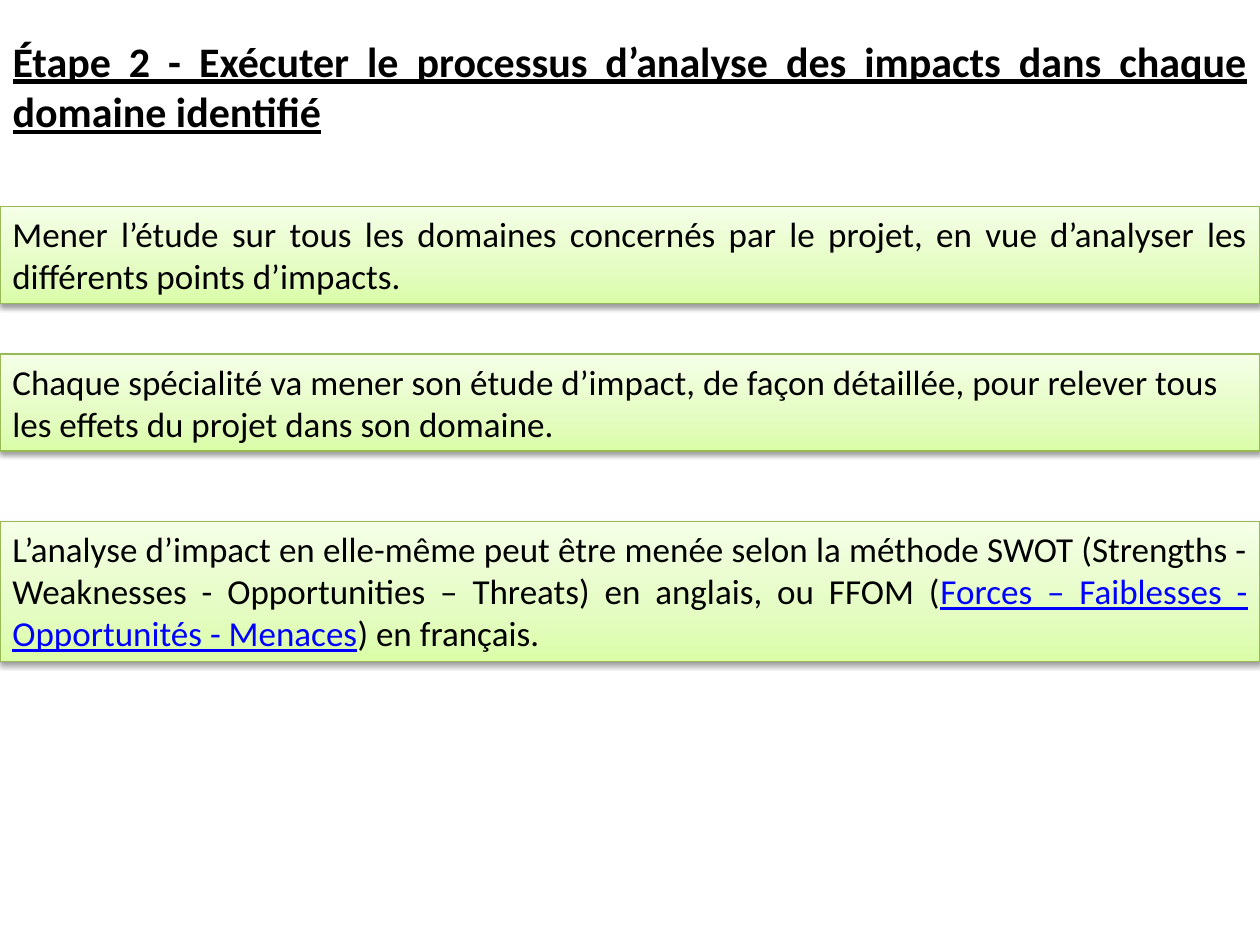
"""Build the slide on step 2 of the impact analysis: a title and three green boxes."""
import copy

import lxml.etree
import pptx
import pptx.dml.color
import pptx.enum.shapes
import pptx.enum.text
import pptx.oxml.ns
import pptx.util

Inches = pptx.util.Inches
Pt = pptx.util.Pt
RGBColor = pptx.dml.color.RGBColor
qn = pptx.oxml.ns.qn
Align = pptx.enum.text.PP_ALIGN
Anchor = pptx.enum.text.MSO_ANCHOR

BLACK = RGBColor(0x00, 0x00, 0x00)
LINK_BLUE = RGBColor(0x00, 0x00, 0xFF)
LINE_GREEN = RGBColor(0x98, 0xB9, 0x55)
GRADIENT = [
    (0, RGBColor(0xDA, 0xFD, 0xA7)),
    (0.35, RGBColor(0xE4, 0xFC, 0xC2)),
    (1, RGBColor(0xF5, 0xFF, 0xE7)),
]
BOXES = [
    (1.64, 0.77, Align.JUSTIFY, [
        ("Mener l’étude sur tous les domaines concernés par le projet, "
         "en vue d’analyser les différents points d’impacts.", False),
    ]),
    (2.81, 0.77, Align.LEFT, [
        ("Chaque spécialité va mener son étude d’impact, de façon détaillée, "
         "pour relever tous les effets du projet dans son domaine.", False),
    ]),
    (4.14, 1.11, Align.JUSTIFY, [
        ("L’analyse d’impact en elle-même peut être menée selon la méthode SWOT "
         "(Strengths - Weaknesses - Opportunities – Threats) en anglais, ou FFOM (", False),
        ("Forces – Faiblesses - Opportunités - Menaces", True),
        (") en français.", False),
    ]),
]


def add_span(para, text, size, color, underline=False, bold=False):
    span = para.add_run()
    span.text = text
    span.font.name = "Calibri"
    span.font.size = Pt(size)
    span.font.color.rgb = color
    span.font.underline = underline
    span.font.bold = bold


def add_soft_shadow(shape):
    shape.shadow.inherit = False
    effects = shape._element.spPr.find(qn("a:effectLst"))
    shadow = lxml.etree.SubElement(
        effects, qn("a:outerShdw"), blurRad=str(Pt(3.1)), dist=str(Pt(1.6)),
        dir="5400000", rotWithShape="0")
    color = lxml.etree.SubElement(shadow, qn("a:srgbClr"), val=str(BLACK))
    lxml.etree.SubElement(color, qn("a:alpha"), val="38000")


deck = pptx.Presentation()
deck.slide_width = Inches(10)
deck.slide_height = Inches(7.5)
page = deck.slides.add_slide(deck.slide_layouts.get_by_name("Title Only"))

title = page.shapes.title
title.left, title.top = Inches(0), Inches(0.23)
title.width, title.height = Inches(10), Inches(5.93)
title.text_frame.vertical_anchor = Anchor.TOP
title.text_frame.auto_size = pptx.enum.text.MSO_AUTO_SIZE.NONE
para = title.text_frame.paragraphs[0]
para.alignment = Align.JUSTIFY
para.space_before = Pt(4.8)
add_span(para, "Étape 2 - Exécuter le processus d’analyse des impacts dans chaque domaine identifié",
         24, BLACK, underline=True, bold=True)

for top, height, alignment, spans in BOXES:
    box = page.shapes.add_shape(
        pptx.enum.shapes.MSO_SHAPE.RECTANGLE,
        Inches(0), Inches(top), Inches(10), Inches(height))
    box.fill.gradient()
    box.fill.gradient_angle = 90
    stop_list = box._element.spPr.find(".//" + qn("a:gsLst"))
    stop_list.insert(1, copy.deepcopy(stop_list[0]))
    for stop, (position, color) in zip(box.fill.gradient_stops, GRADIENT):
        stop.position = position
        stop.color.rgb = color
    box.line.color.rgb = LINE_GREEN
    box.line.width = Pt(0.75)
    add_soft_shadow(box)

    frame = box.text_frame
    frame.word_wrap = True
    frame.auto_size = pptx.enum.text.MSO_AUTO_SIZE.SHAPE_TO_FIT_TEXT
    frame.vertical_anchor = Anchor.TOP
    para = frame.paragraphs[0]
    para.alignment = alignment
    for text, is_link in spans:
        add_span(para, text, 20, LINK_BLUE if is_link else BLACK, underline=is_link)

deck.save("out.pptx")
